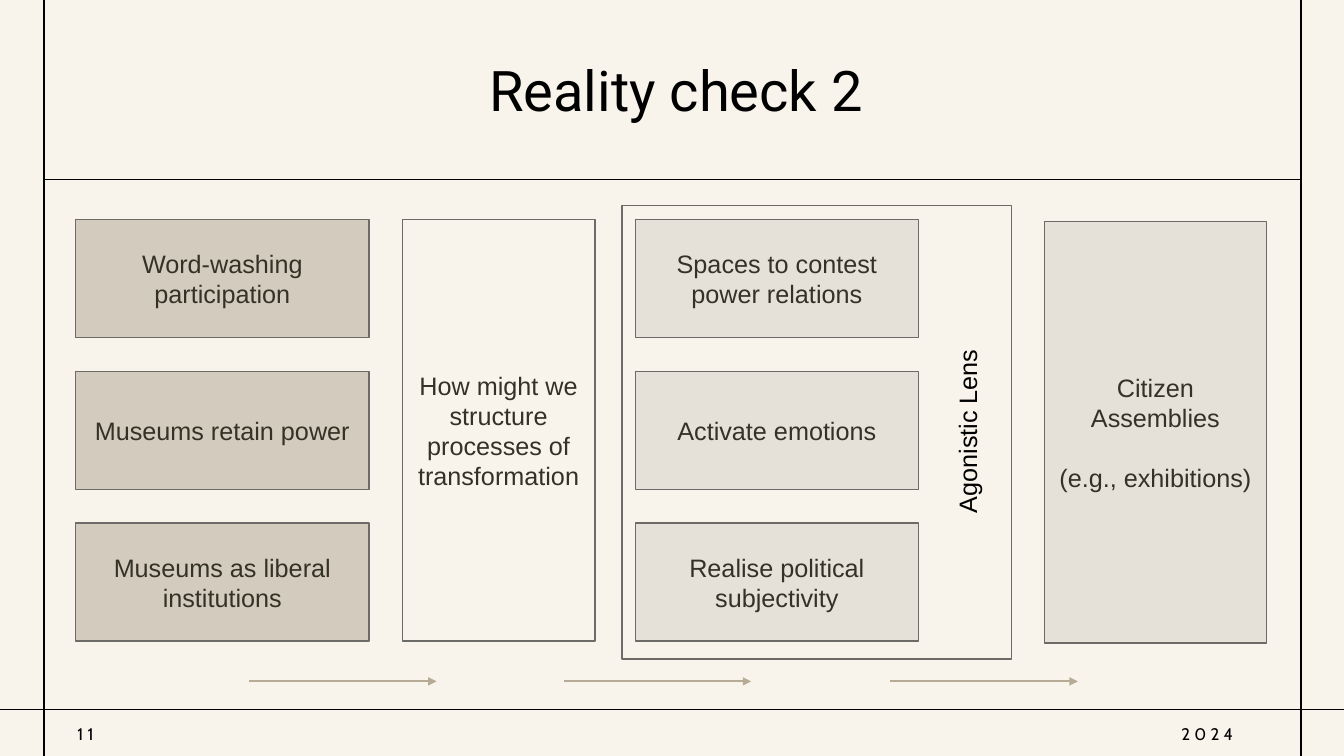
import pptx
import pptx.util
import pptx.dml.color
import pptx.enum.shapes
import pptx.enum.text
import pptx.oxml.ns
import lxml.etree
from dataclasses import dataclass

TITLE = "Reality check 2"
ISSUES = ["Word-washing participation", "Museums retain power", "Museums as liberal institutions"]
PROMPT = ["How might we structure processes of transformation"]
AIMS = ["Spaces to contest power relations", "Activate emotions", "Realise political subjectivity"]
RESULT = ["Citizen Assemblies", "(e.g., exhibitions)"]
LENS = "Agonistic Lens"
FOOTER = [("11", 0.67), ("2024", 11.62)]


@dataclass(frozen=True)
class Theme:
    paper: str = "F8F4EC"
    ink: str = "000000"
    text: str = "353127"
    sand: str = "D3CBBD"
    stone: str = "E5E0D8"
    edge: str = "6D6B67"
    arrow: str = "B8AB95"
    head: str = "Roboto"
    body: str = "Arial"
    foot: str = "Cabin"
    big: int = 40
    mid: int = 18
    small: int = 12


theme = Theme()
WIDE, HIGH = 13.33, 7.5
LEFT, RIGHT = 0.44, 12.9
RULE, BASE = 1.78, 7.04
TOP, CELL, GAP = 2.18, 1.17, 0.335
TALL = 3 * CELL + 2 * GAP
COLS = {"issues": (0.75, 2.91), "prompt": (3.99, 1.91), "aims": (6.3, 2.81), "result": (10.36, 2.2)}
FRAME = (6.17, 2.04, 3.86, 4.5)
FLOW, REACH = 6.76, 1.86
STARTS = [2.47, 5.59, 8.83]

Inches = pptx.util.Inches
Pt = pptx.util.Pt
Align = pptx.enum.text.PP_ALIGN
Anchor = pptx.enum.text.MSO_ANCHOR
Fit = pptx.enum.text.MSO_AUTO_SIZE


def color(code):
    return pptx.dml.color.RGBColor.from_string(code)


def write(para, text, font, size, code, gap=0):
    run = para.add_run()
    run.text = text
    run.font.name = font
    run.font.size = Pt(size)
    run.font.color.rgb = color(code)
    if gap:
        run._r.get_or_add_rPr().set("spc", str(gap * 100))


def draw_box(slide, area, fill, lines=()):
    box = slide.shapes.add_shape(pptx.enum.shapes.MSO_SHAPE.RECTANGLE, *map(Inches, area))
    box.shadow.inherit = False
    box.fill.solid()
    box.fill.fore_color.rgb = color(fill)
    box.line.color.rgb = color(theme.edge)
    box.line.width = Pt(1)
    frame = box.text_frame
    frame.word_wrap = True
    frame.vertical_anchor = Anchor.MIDDLE
    for i, text in enumerate(lines):
        para = frame.add_paragraph() if i else frame.paragraphs[0]
        para.alignment = Align.CENTER
        if i:
            para.space_before = Pt(theme.mid * 1.2)
        write(para, text, theme.body, theme.mid, theme.text)


def draw_line(slide, ends, code, width, arrow=False):
    link = slide.shapes.add_connector(pptx.enum.shapes.MSO_CONNECTOR.STRAIGHT, *map(Inches, ends))
    link.line.color.rgb = color(code)
    link.line.width = Pt(width)
    qn = pptx.oxml.ns.qn
    if arrow:
        lxml.etree.SubElement(link.line._get_or_add_ln(), qn("a:tailEnd"), type="triangle")
    lxml.etree.SubElement(link._element.spPr, qn("a:effectLst"))


def draw_text(slide, area, text, font, size, gap=0, wrap=True):
    box = slide.shapes.add_textbox(*map(Inches, area))
    box.text_frame.word_wrap = wrap
    box.text_frame.vertical_anchor = Anchor.MIDDLE
    write(box.text_frame.paragraphs[0], text, font, size, theme.ink, gap)
    return box


def set_title(slide):
    title = slide.shapes.title
    title.left, title.top, title.width, title.height = map(Inches, (2.24, 0.4, 8.93, 1.06))
    frame = title.text_frame
    frame.auto_size = Fit.NONE
    frame.word_wrap = True
    frame.vertical_anchor = Anchor.MIDDLE
    para = frame.paragraphs[0]
    para.alignment = Align.CENTER
    para.line_spacing = 0.9
    write(para, TITLE, theme.head, theme.big, theme.ink)


def main():
    deck = pptx.Presentation()
    deck.slide_width, deck.slide_height = Inches(WIDE), Inches(HIGH)
    slide = deck.slides.add_slide(deck.slide_layouts[5])
    slide.background.fill.solid()
    slide.background.fill.fore_color.rgb = color(theme.paper)

    rules = [(LEFT, RULE, RIGHT, RULE), (0, BASE, WIDE, BASE)]
    rules += [(x, HIGH, x, 0) for x in (LEFT, RIGHT)]
    for ends in rules:
        draw_line(slide, ends, theme.ink, 1.25)

    set_title(slide)
    draw_box(slide, FRAME, theme.paper)

    for name, items, fill in (("issues", ISSUES, theme.sand), ("aims", AIMS, theme.stone)):
        left, width = COLS[name]
        for row, text in enumerate(items):
            top = TOP + row * (CELL + GAP)
            draw_box(slide, (left, top, width, CELL), fill, [text])

    for name, lines, fill, drop in (("prompt", PROMPT, theme.paper, 0), ("result", RESULT, theme.stone, 0.02)):
        left, width = COLS[name]
        draw_box(slide, (left, TOP + drop, width, TALL), fill, lines)

    lens = draw_text(slide, (8.65, 4.05, 1.88, 0.4), LENS, theme.body, theme.mid, wrap=False)
    lens.text_frame.auto_size = Fit.SHAPE_TO_FIT_TEXT
    lens.rotation = 270

    for text, left in FOOTER:
        draw_text(slide, (left, 7.13, 1.04, 0.3), text, theme.foot, theme.small, gap=3)

    for start in STARTS:
        draw_line(slide, (start, FLOW, start + REACH, FLOW), theme.arrow, 1.5, arrow=True)

    deck.save("out.pptx")


if __name__ == "__main__":
    main()
